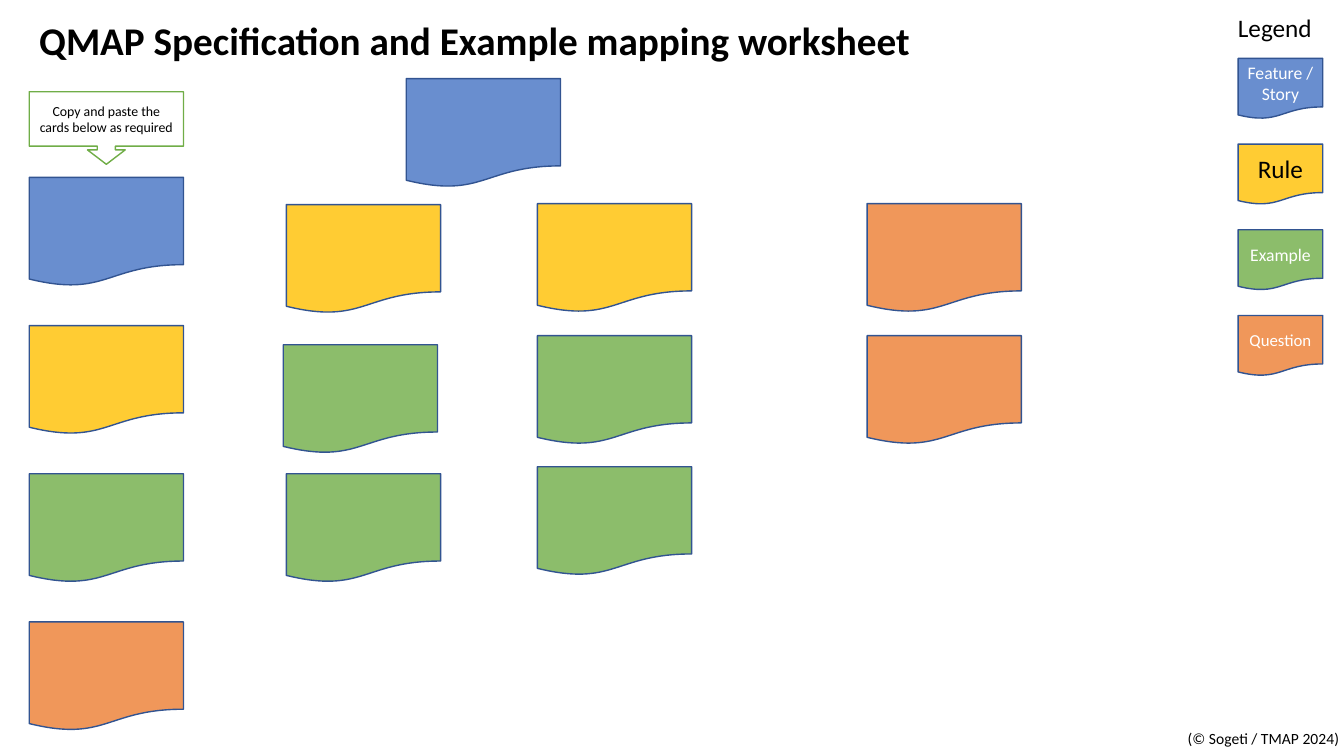
from lxml import etree
from pptx import Presentation
from pptx import util as u
from pptx.dml.color import RGBColor
from pptx.enum import shapes, text
from pptx.oxml.ns import qn

COLOURS = {"story": "4472C4", "rule": "FFC000", "example": "70AD47", "question": "ED7D31"}
BLACK, WHITE, OUTLINE = "000000", "FFFFFF", "325491"
CARD = (1.53, 1.08)
LEGEND_CARD = (0.84, 0.6)
MARGIN = 0.29
BOARD_COLUMNS = (2.84, 5.33, 8.6)
BOARD_ROWS = (2.02, 3.33, 4.63)


def colour(value):
    return RGBColor.from_string(value)


def write(shape, wording, size, shade=BLACK, bold=False, align="CENTER", spacing=1.0, **frame_format):
    frame = shape.text_frame
    settings = {"word_wrap": True, "vertical_anchor": text.MSO_ANCHOR.MIDDLE} | frame_format
    for name, value in settings.items():
        setattr(frame, name, value)
    paragraph = frame.paragraphs[0]
    paragraph.text = wording
    paragraph.alignment = getattr(text.PP_ALIGN, align)
    paragraph.line_spacing = spacing
    font = paragraph.runs[0].font
    for name, value in {"name": "Calibri", "size": u.Pt(size), "bold": bold}.items():
        setattr(font, name, value)
    font.color.rgb = colour(shade)


def add_label(parent, box, wording, size, **text_format):
    label = parent.add_textbox(*map(u.Inches, box))
    write(label, wording, size, **text_format)


def add_outlined(parent, preset, box, fill, line):
    shape = parent.add_shape(preset, *map(u.Inches, box))
    shape.shadow.inherit = False
    shape.fill.solid()
    shape.fill.fore_color.rgb = colour(fill)
    shape.line.color.rgb = colour(line)
    shape.line.width = u.Pt(1)
    return shape


def add_card(parent, kind, left, top, size=CARD):
    document = shapes.MSO_SHAPE.FLOWCHART_DOCUMENT
    card = add_outlined(parent, document, (left, top, *size), COLOURS[kind], OUTLINE)
    fill = card.fill._xPr.find(qn("a:solidFill"))
    etree.SubElement(fill[0], qn("a:alpha"), val="80000")
    return card


def build_palette(parent, left, top):
    callout = add_outlined(parent, shapes.MSO_SHAPE.DOWN_ARROW_CALLOUT,
                           (left, top, CARD[0], 0.72), WHITE, COLOURS["example"])
    for index, value in enumerate((0.25, 0.26, 0.198, 0.75)):
        callout.adjustments[index] = value
    write(callout, "Copy and paste the cards below as required", 9.9,
          margin_left=u.Inches(0.08), margin_right=u.Inches(0.08))
    for row, kind in enumerate(COLOURS):
        add_card(parent, kind, left, top + 0.85 + 1.47 * row)


def build_board(parent):
    first, second, third = BOARD_COLUMNS
    top, middle, bottom = BOARD_ROWS
    add_card(parent, "story", 4.03, 0.78)
    for kind, left, card_top in (
        ("rule", first, top + 0.01),
        ("example", first - 0.03, middle + 0.09),
        ("example", first, bottom + 0.07),
        ("rule", second, top),
        ("example", second, middle),
        ("example", second, bottom),
        ("question", third, top),
        ("question", third, middle),
    ):
        add_card(parent, kind, left, card_top)


def build_legend(parent, left, top):
    group = parent.add_group_shape().shapes
    add_label(group, (left - 0.1, top, 0.94, 0.4), "Legend", 18, align="LEFT",
              word_wrap=False, vertical_anchor=text.MSO_ANCHOR.TOP)
    entries = (
        ("story", "Feature / Story", 12.6, WHITE),
        ("rule", "Rule", 18, BLACK),
        ("example", "Example", 12.6, WHITE),
        ("question", "Question", 12, WHITE),
    )
    for row, (kind, wording, size, shade) in enumerate(entries):
        card = add_card(group, kind, left, top + 0.51 + 0.85 * row, LEGEND_CARD)
        write(card, wording, size, shade, margin_left=u.Inches(0.05), margin_right=u.Inches(0.05))


def build_worksheet(slide):
    parent = slide.shapes
    add_label(parent, (MARGIN, 0.12, 10.35, 0.6), "QMAP Specification and Example mapping worksheet",
              28, bold=True, align="LEFT", spacing=0.9)
    build_palette(parent, MARGIN, 0.91)
    build_board(parent)
    build_legend(parent, 12.28, 0.07)
    add_label(parent, (11.66, 7.14, 1.72, 0.4), "(© Sogeti / TMAP 2024)", 11.1,
              align="RIGHT", spacing=0.9)


def main():
    presentation = Presentation()
    presentation.slide_width = u.Inches(13.33)
    presentation.slide_height = u.Inches(7.5)
    build_worksheet(presentation.slides.add_slide(presentation.slide_layouts[6]))
    presentation.save("out.pptx")


if __name__ == "__main__":
    main()
